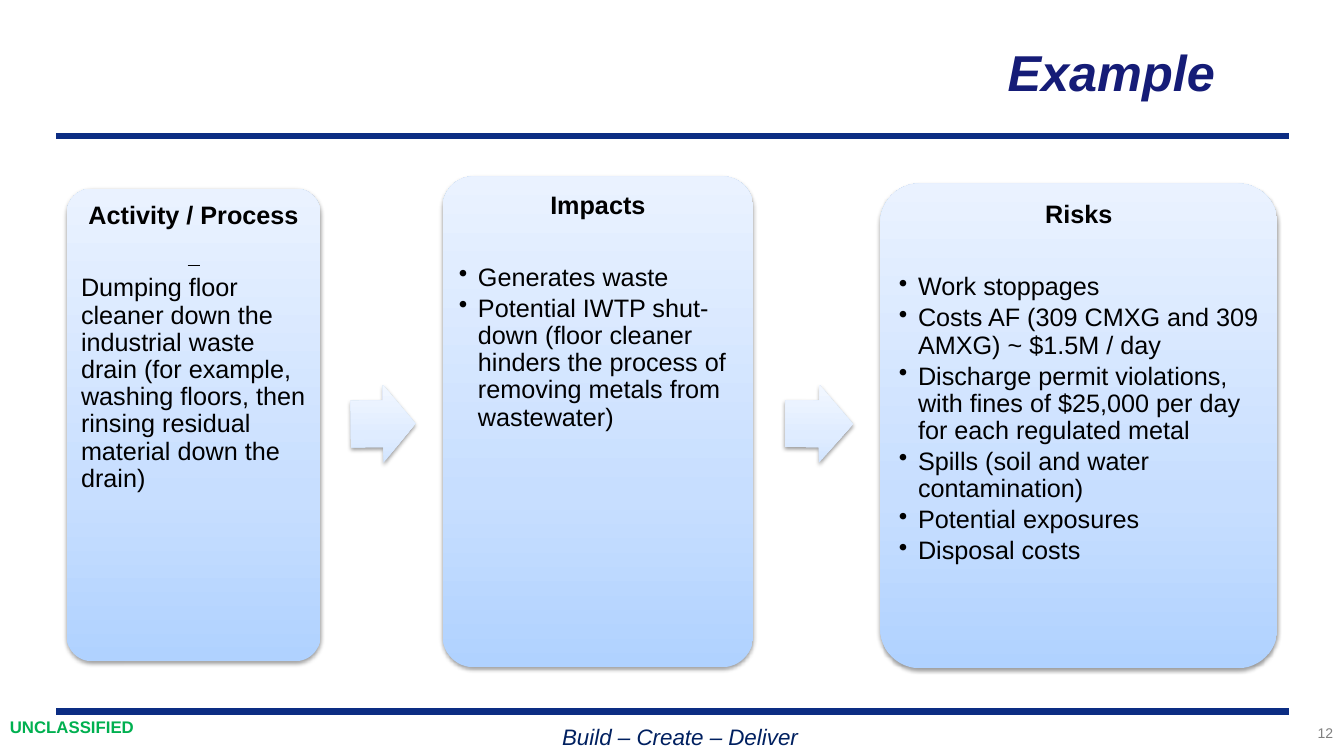
"""Build the example slide that leads from an activity to its impacts and risks."""
from dataclasses import dataclass

from pptx import Presentation
from pptx.dml.color import RGBColor
from pptx.enum.shapes import MSO_CONNECTOR, MSO_SHAPE
from pptx.enum.text import MSO_ANCHOR, PP_ALIGN
from pptx.oxml import parse_xml
from pptx.oxml.ns import nsdecls, qn
from pptx.util import Inches, Pt

LEFT, CENTER, RIGHT = PP_ALIGN.LEFT, PP_ALIGN.CENTER, PP_ALIGN.RIGHT
TOP, MIDDLE = MSO_ANCHOR.TOP, MSO_ANCHOR.MIDDLE
ROUND, ARROW = MSO_SHAPE.ROUNDED_RECTANGLE, MSO_SHAPE.RIGHT_ARROW
STRAIGHT = MSO_CONNECTOR.STRAIGHT


@dataclass(frozen=True)
class Theme:
    font: str = "Arial"
    title: str = "151C77"
    rule: str = "0C2D83"
    motto: str = "002060"
    mark: str = "00B050"
    page: str = "808080"
    ink: str = "000000"
    card: tuple = ("B0D2FF", "C7DEFF", "EAF2FF")
    arrow: tuple = ("D2E5FF", "DFECFF", "F2F7FF")
    head_size: float = 36
    body_size: float = 18
    motto_size: float = 16
    mark_size: float = 12
    page_size: float = 10


@dataclass(frozen=True)
class Card:
    box: tuple
    head: str
    items: tuple
    dots: bool = True


@dataclass(frozen=True)
class Arrow:
    box: tuple
    turn: float


THEME = Theme()

CARDS = (
    Card((0.66, 1.87, 2.52, 4.69), "Activity / Process", (
        "Dumping floor cleaner down the industrial waste drain (for example, "
        "washing floors, then rinsing residual material down the drain)",
    ), dots=False),
    Card((4.39, 1.75, 3.08, 4.87), "Impacts", (
        "Generates waste",
        "Potential IWTP shut-down (floor cleaner hinders the process of "
        "removing metals from wastewater)",
    )),
    Card((8.73, 1.82, 3.94, 4.81), "Risks", (
        "Work stoppages",
        "Costs AF (309 CMXG and 309 AMXG) ~ $1.5M / day",
        "Discharge permit violations, with fines of $25,000 per day "
        "for each regulated metal",
        "Spills (soil and water contamination)",
        "Potential exposures",
        "Disposal costs",
    )),
)

ARROWS = (
    Arrow((3.48, 3.82, 0.64, 0.77), 359.5),
    Arrow((7.79, 3.82, 0.67, 0.77), 0.4),
)


def write(para, text: str, *, size: float = THEME.body_size,
          color: str = THEME.ink, bold: bool = False, italic: bool = False,
          align=LEFT, after: float = 0, pitch: float = 1,
          dot: bool = False) -> None:
    """Write one formatted paragraph."""
    para.alignment = align
    para.line_spacing = pitch
    para.space_before = Pt(0)
    para.space_after = Pt(after)
    if dot:
        props = para._p.get_or_add_pPr()
        props.set("marL", str(Inches(0.19)))
        props.set("indent", str(-Inches(0.19)))
        props.append(parse_xml(f'<a:buChar {nsdecls("a")} char="•"/>'))
    run = para.add_run()
    run.text = text
    font = run.font
    font.name, font.size = THEME.font, Pt(size)
    font.bold, font.italic = bold, italic
    font.color.rgb = RGBColor.from_string(color)


def label(slide, box: tuple, text: str, **form) -> None:
    """Add a text box of one paragraph."""
    frame = slide.shapes.add_textbox(*map(Inches, box)).text_frame
    frame.word_wrap = True
    write(frame.paragraphs[0], text, **form)


def rule(slide, start: tuple, end: tuple, color: str, width: float) -> None:
    """Draw a flat straight line."""
    line = slide.shapes.add_connector(STRAIGHT, *map(Inches, start + end))
    line.line.color.rgb = RGBColor.from_string(color)
    line.line.width = Pt(width)
    line._element.spPr.append(parse_xml(f'<a:effectLst {nsdecls("a")}/>'))


def block(slide, kind, box: tuple, tones: tuple, *ratios: float):
    """Add a shape with an upward gradient and a soft shadow."""
    shape = slide.shapes.add_shape(kind, *map(Inches, box))
    for spot, ratio in enumerate(ratios):
        shape.adjustments[spot] = ratio
    shape.fill.background()
    shape.line.fill.background()
    shape.shadow.inherit = False
    stops = "".join(
        f'<a:gs pos="{pos * 1000}"><a:srgbClr val="{tone}"/></a:gs>'
        for pos, tone in zip((0, 35, 100), tones))
    props = shape._element.spPr
    props.replace(props.find(qn("a:noFill")), parse_xml(
        f'<a:gradFill {nsdecls("a")} rotWithShape="1"><a:gsLst>{stops}'
        '</a:gsLst><a:lin ang="16200000" scaled="0"/></a:gradFill>'))
    props.find(qn("a:effectLst")).append(parse_xml(
        f'<a:outerShdw {nsdecls("a")} blurRad="{Pt(3.1)}" dist="{Pt(1.6)}" '
        'dir="5400000" rotWithShape="0"><a:srgbClr val="000000">'
        '<a:alpha val="38000"/></a:srgbClr></a:outerShdw>'))
    return shape


def draw_card(slide, card: Card) -> None:
    """Draw a card with its heading and items."""
    frame = block(slide, ROUND, card.box, THEME.card, 0.1).text_frame
    frame.word_wrap = True
    frame.vertical_anchor = TOP
    frame.margin_left = frame.margin_right = Inches(0.07)
    frame.margin_top = frame.margin_bottom = Inches(0.07)
    write(frame.paragraphs[0], card.head, bold=True, align=CENTER,
          after=32, pitch=0.9)
    for item in card.items:
        write(frame.add_paragraph(), item, after=2.7, pitch=0.9,
              dot=card.dots)


def draw_arrow(slide, arrow: Arrow) -> None:
    """Draw an arrow between two cards."""
    shape = block(slide, ARROW, arrow.box, THEME.arrow, 0.6, 0.5)
    shape.rotation = arrow.turn


def main() -> None:
    """Build and save the slide."""
    deck = Presentation()
    deck.slide_width, deck.slide_height = Inches(13.33), Inches(7.5)
    slide = deck.slides.add_slide(deck.slide_layouts[5])

    title = slide.shapes.title
    title.left, title.top = Inches(1.45), Inches(0.08)
    title.width, title.height = Inches(10.7), Inches(1.25)
    title.text_frame.vertical_anchor = MIDDLE
    write(title.text_frame.paragraphs[0], "Example", size=THEME.head_size,
          color=THEME.title, bold=True, italic=True, align=RIGHT)

    for y in (1.35, 7.06):
        rule(slide, (0.56, y), (12.78, y), THEME.rule, 4.5)
    label(slide, (0.19, 7.13, 13.11, 0.37), "Build – Create – Deliver",
          size=THEME.motto_size, color=THEME.motto, italic=True, align=CENTER)
    label(slide, (0, 7.06, 3.53, 0.3), "UNCLASSIFIED",
          size=THEME.mark_size, color=THEME.mark, bold=True)
    label(slide, (11.65, 7.14, 1.67, 0.33), "12",
          size=THEME.page_size, color=THEME.page, align=RIGHT)

    for card in CARDS:
        draw_card(slide, card)
    for arrow in ARROWS:
        draw_arrow(slide, arrow)
    rule(slide, (1.86, 2.63), (1.98, 2.63), THEME.ink, 0.75)

    deck.save("out.pptx")


if __name__ == "__main__":
    main()
